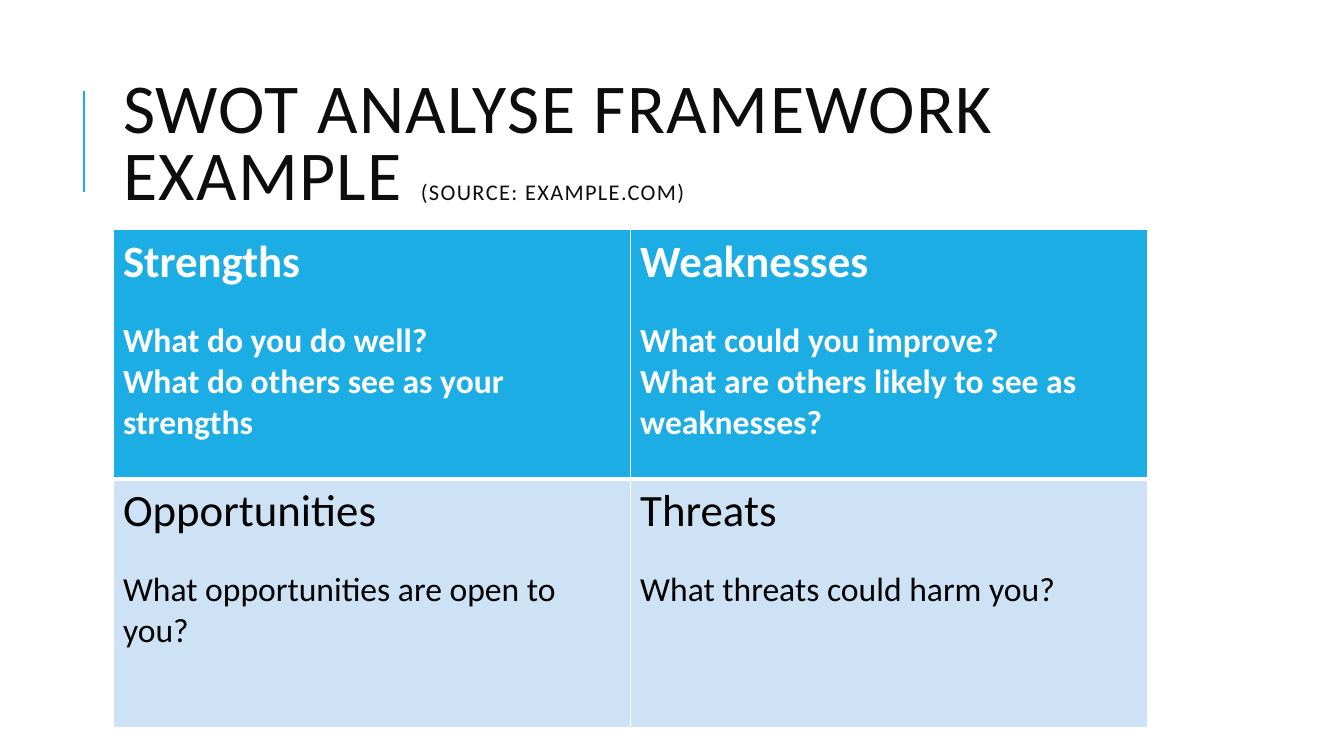
from dataclasses import dataclass

from lxml import etree
from pptx import Presentation
from pptx.dml.color import RGBColor
from pptx.enum.shapes import MSO_CONNECTOR
from pptx.enum.text import MSO_ANCHOR, MSO_AUTO_SIZE, PP_ALIGN
from pptx.oxml.ns import qn
from pptx.util import Inches, Pt

STRAIGHT = MSO_CONNECTOR.STRAIGHT
MIDDLE = MSO_ANCHOR.MIDDLE
NO_AUTOFIT = MSO_AUTO_SIZE.NONE
LEFT = PP_ALIGN.LEFT


@dataclass(frozen=True)
class Theme:
    font: str = "Calibri"
    accent: str = "1CADE4"
    pale: str = "CDE3F5"
    title_ink: str = "0D0D0D"
    white: str = "FFFFFF"
    black: str = "000000"
    title: int = 50
    source: int = 16
    heading: int = 32
    question: int = 24
    heading_gap: int = 22


THEME = Theme()


def add_text(p, text, size, color, bold=False, tracking=None):
    r = p.add_run()
    r.text = text
    r.font.name = THEME.font
    r.font.size = Pt(size)
    r.font.bold = bold
    r.font.color.rgb = RGBColor.from_string(color)
    if tracking:
        r.font._element.set("spc", str(tracking * 100))


def set_borders(cell, widths):
    """Draw white borders; widths are points for left, right, top, bottom."""
    tcPr = cell._tc.get_or_add_tcPr()
    for i, (side, width) in enumerate(zip(("lnL", "lnR", "lnT", "lnB"), widths)):
        ln = etree.Element(qn(f"a:{side}"), w=str(Pt(width)))
        fill = etree.SubElement(ln, qn("a:solidFill"))
        etree.SubElement(fill, qn("a:srgbClr"), val=THEME.white)
        tcPr.insert(i, ln)


prs = Presentation()
prs.slide_width, prs.slide_height = Inches(13.33), Inches(7.5)
slide = prs.slides.add_slide(prs.slide_layouts[5])

# Accent line beside the title
line = slide.shapes.add_connector(
    STRAIGHT, Inches(0.83), Inches(1.9), Inches(0.83), Inches(0.9))
line.line.color.rgb = RGBColor.from_string(THEME.accent)
line.line.width = Pt(1.5)
etree.SubElement(line._element.spPr, qn("a:effectLst"))

# Title
title = slide.shapes.title
title.left, title.top = Inches(1.12), Inches(0.64)
title.width, title.height = Inches(10.63), Inches(1.64)
tf = title.text_frame
tf.word_wrap = True
tf.auto_size = NO_AUTOFIT
tf.vertical_anchor = MIDDLE
p = tf.paragraphs[0]
p.alignment = LEFT
p.line_spacing = 0.8
add_text(p, "SWOT ANALYSE FRAMEWORK EXAMPLE ", THEME.title, THEME.title_ink, tracking=1)
add_text(p, "(SOURCE: EXAMPLE.COM)", THEME.source, THEME.title_ink, tracking=1)

# SWOT table
quadrants = [
    [("Strengths", ["What do you do well?",
                    "What do others see as your strengths"]),
     ("Weaknesses", ["What could you improve?",
                     "What are others likely to see as weaknesses?"])],
    [("Opportunities", ["What opportunities are open to you?"]),
     ("Threats", ["What threats could harm you?"])],
]
row_styles = [
    dict(fill=THEME.accent, ink=THEME.white, bold=True, borders=(1, 1, 1, 3)),
    dict(fill=THEME.pale, ink=THEME.black, bold=False, borders=(1, 1, 3, 1)),
]
table = slide.shapes.add_table(
    2, 2, Inches(1.12), Inches(2.28), Inches(10.26), Inches(4.94)).table

for row, (quadrant_row, style) in enumerate(zip(quadrants, row_styles)):
    for col, (heading, questions) in enumerate(quadrant_row):
        cell = table.cell(row, col)
        cell.fill.solid()
        cell.fill.fore_color.rgb = RGBColor.from_string(style["fill"])
        set_borders(cell, style["borders"])
        tf = cell.text_frame
        p = tf.paragraphs[0]
        p.space_after = Pt(THEME.heading_gap)
        add_text(p, heading, THEME.heading, style["ink"], style["bold"])
        for question in questions:
            add_text(tf.add_paragraph(), question, THEME.question,
                     style["ink"], style["bold"])

prs.save("out.pptx")
